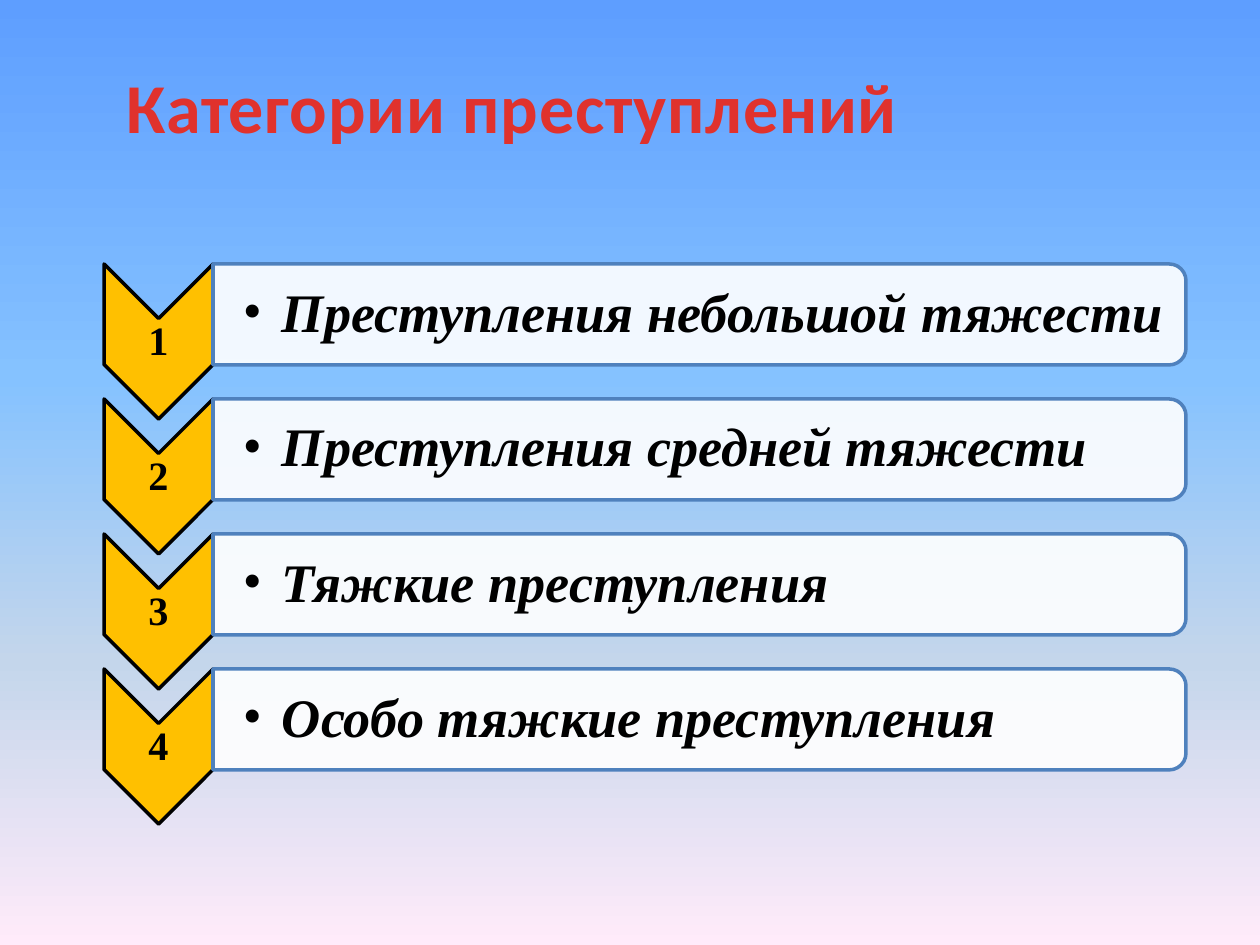
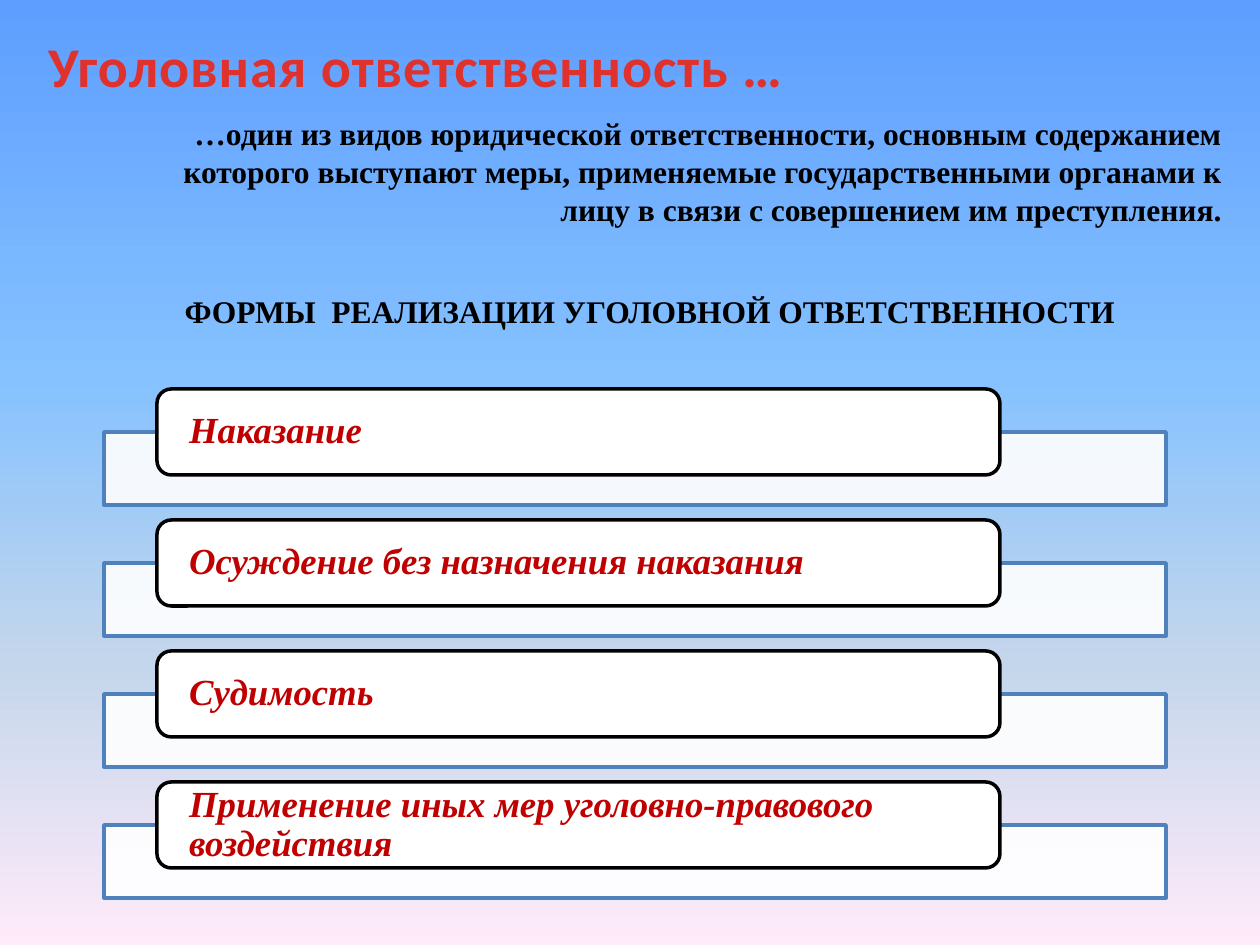
from lxml import etree
from pptx import Presentation
from pptx import util as u
from pptx.dml.color import RGBColor
from pptx.enum import shapes, text
from pptx.oxml.ns import qn

PX_PER_INCH = 126
SLIDE_W, SLIDE_H = 1260, 945

BLACK = RGBColor(0x00, 0x00, 0x00)
WHITE = RGBColor(0xFF, 0xFF, 0xFF)
GOLD = RGBColor(0xFF, 0xC0, 0x00)
BLUE = RGBColor(0x4F, 0x81, 0xBD)
TITLE_RED = RGBColor(0xE0, 0x32, 0x2D)
DARK_RED = RGBColor(0xC0, 0x00, 0x00)
SKY = [
    (0, RGBColor(0x5E, 0x9E, 0xFF)),
    (40, RGBColor(0x85, 0xC2, 0xFF)),
    (70, RGBColor(0xC4, 0xD6, 0xEB)),
    (100, RGBColor(0xFF, 0xEB, 0xFA)),
]
TITLE_FONT, BODY_FONT = "Calibri", "Times New Roman"
DEFAULT_INSETS = (13, 6, 13, 6)

CATEGORIES = [
    "Преступления небольшой тяжести",
    "Преступления средней тяжести",
    "Тяжкие преступления",
    "Особо тяжкие преступления",
]
FORMS = [
    "Наказание",
    "Осуждение без назначения наказания",
    "Судимость",
    "Применение иных мер уголовно-правового воздействия",
]
DEFINITION = (
    "…один из видов юридической ответственности, основным содержанием "
    "которого выступают меры, применяемые государственными органами к лицу "
    "в связи с совершением им преступления."
)


def px(length):
    return u.Emu(round(length * u.Inches(1) / PX_PER_INCH))


def paint_sky(master):
    """Gives every slide of the master the vertical gradient."""
    fill = master.background.fill
    fill.gradient()
    fill.gradient_angle = 270
    stops = master.element.xpath("p:cSld/p:bg//a:gsLst")[0]
    for stop in list(stops):
        stops.remove(stop)
    for percent, color in SKY:
        stop = etree.SubElement(stops, qn("a:gs"), pos=str(percent * 1000))
        etree.SubElement(stop, qn("a:srgbClr"), val=str(color))


def add_panel(slide, preset, box, fill, line, opacity=100, turned=False):
    """Draws a preset shape in box; turned shapes are rotated 90° to fill it."""
    left, top, width, height = box
    if turned:
        left += (width - height) / 2
        top += (height - width) / 2
        width, height = height, width
    panel = slide.shapes.add_shape(preset, px(left), px(top), px(width), px(height))
    panel.rotation = 90 if turned else 0
    panel.shadow.inherit = False
    panel.fill.solid()
    panel.fill.fore_color.rgb = fill
    if opacity < 100:
        color = panel.fill._xPr.find(qn("a:solidFill"))[0]
        etree.SubElement(color, qn("a:alpha"), val=str(opacity * 1000))
    panel.line.color.rgb = line
    panel.line.width = u.Pt(2)
    return panel


def write(frame, words, size, color=BLACK, font=BODY_FONT, italic=False,
          align=text.PP_ALIGN.LEFT, insets=DEFAULT_INSETS,
          anchor=text.MSO_ANCHOR.TOP, spacing=1.0):
    frame.word_wrap = True
    frame.vertical_anchor = anchor
    (frame.margin_left, frame.margin_top,
     frame.margin_right, frame.margin_bottom) = map(px, insets)
    paragraph = frame.paragraphs[0]
    paragraph.text = words
    paragraph.alignment = align
    paragraph.line_spacing = spacing
    paragraph.font.name = font
    paragraph.font.size = u.Pt(size)
    paragraph.font.bold = True
    paragraph.font.italic = italic
    paragraph.font.color.rgb = color
    return paragraph


def add_text(slide, box, words, size, **style):
    frame = slide.shapes.add_textbox(*map(px, box)).text_frame
    return write(frame, words, size, **style)


def add_title(slide, box, words, size, align=text.PP_ALIGN.LEFT):
    title = add_text(slide, box, words, size, color=TITLE_RED,
                     font=TITLE_FONT, align=align)
    title.runs[0].font._element.set("spc", "50")


def add_bullet(paragraph, indent):
    properties = paragraph._p.get_or_add_pPr()
    properties.set("marL", str(px(indent)))
    properties.set("indent", str(-px(indent)))
    etree.SubElement(properties, qn("a:buFont"), typeface=BODY_FONT)
    etree.SubElement(properties, qn("a:buChar"), char="•")


def add_category(slide, left, top, number, category):
    """Places a numbered chevron and the bar to its right."""
    chevron_w, bar_w, bar_h = 109, 973, 101
    bar_left = left + chevron_w
    middle = dict(anchor=text.MSO_ANCHOR.MIDDLE, spacing=0.9)
    add_panel(slide, shapes.MSO_SHAPE.CHEVRON, (left, top, chevron_w, 155),
              GOLD, BLACK, turned=True)
    add_text(slide, (left, top + 55, chevron_w, 47), str(number), 23,
             align=text.PP_ALIGN.CENTER, insets=(2, 2, 2, 2), **middle)
    add_panel(slide, shapes.MSO_SHAPE.ROUND_2_SAME_RECTANGLE,
              (bar_left, top, bar_w, bar_h), WHITE, BLUE, opacity=90, turned=True)
    label = add_text(slide, (bar_left, top + 5, bar_w - 5, bar_h - 10), category,
                     31, italic=True, insets=(30, 2, 2, 2), **middle)
    add_bullet(label, 39)


def add_form(slide, left, top, form):
    """Places a label pill over the track behind it."""
    add_panel(slide, shapes.MSO_SHAPE.RECTANGLE, (left, top + 43, 1062, 73),
              WHITE, BLUE, opacity=90)
    pill = add_panel(slide, shapes.MSO_SHAPE.ROUNDED_RECTANGLE,
                     (left + 53, top, 843, 86), WHITE, BLACK)
    write(pill.text_frame, form, 21, color=DARK_RED, italic=True,
          insets=(28, 0, 28, 0), anchor=text.MSO_ANCHOR.MIDDLE, spacing=0.9)


def build_categories(slide):
    add_title(slide, (44, 58, 953, 97), "Категории преступлений ", 40,
              align=text.PP_ALIGN.CENTER)
    for index, category in enumerate(CATEGORIES):
        add_category(slide, 104, 264 + 135 * index, index + 1, category)


def build_responsibility(slide):
    add_title(slide, (35, 25, 953, 81), "Уголовная ответственность …", 32)
    add_text(slide, (164, 108, 1071, 127), DEFINITION, 18,
             align=text.PP_ALIGN.RIGHT)
    add_text(slide, (144, 286, 1012, 50),
             "ФОРМЫ  РЕАЛИЗАЦИИ УГОЛОВНОЙ ОТВЕТСТВЕННОСТИ", 18,
             align=text.PP_ALIGN.CENTER)
    for index, form in enumerate(FORMS):
        add_form(slide, 104, 389 + 131 * index, form)


def main():
    deck = Presentation()
    deck.slide_width, deck.slide_height = px(SLIDE_W), px(SLIDE_H)
    paint_sky(deck.slide_master)
    blank = deck.slide_layouts[6]
    for build in (build_categories, build_responsibility):
        build(deck.slides.add_slide(blank))
    deck.save("out.pptx")


if __name__ == "__main__":
    main()
